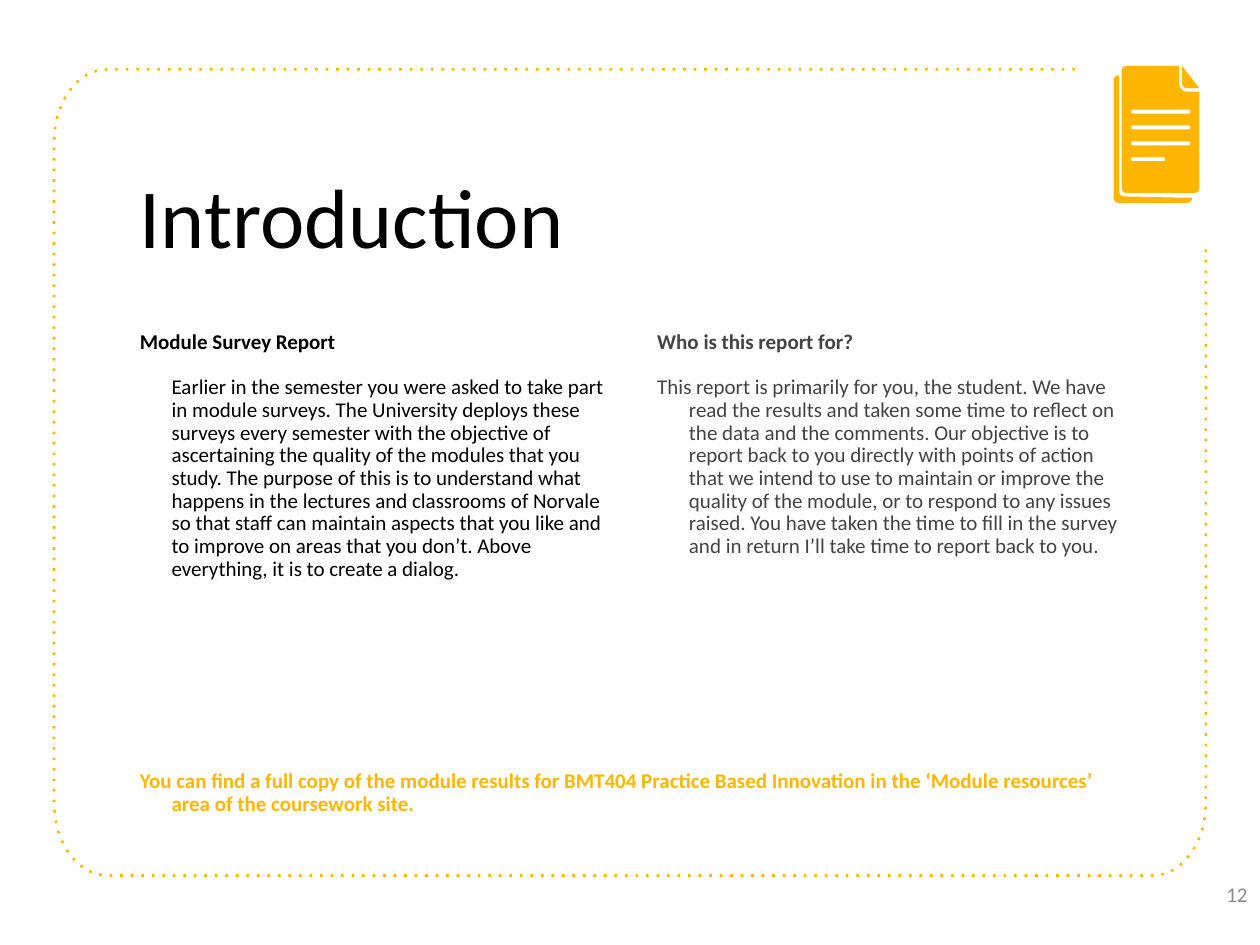
import math
from pptx import Presentation
from pptx import util as u
from pptx.dml.color import RGBColor
from pptx.enum import text
from pptx.oxml import ns, xmlchemy

COLORS = {"amber": "FFB600", "black": "000000", "dark": "434343", "gray": "8C8C8C"}
UNITS = 1000


def arc(cx, cy, rx, ry, start, end, steps=8):
    angles = [math.radians(start + (end - start) * i / steps) for i in range(steps + 1)]
    return [(cx + rx * math.cos(a), cy + ry * math.sin(a)) for a in angles]


def outline(contours, close):
    contours = [[(round(x * UNITS), round(y * UNITS)) for x, y in c] for c in contours]
    fb = s.shapes.build_freeform(*contours[0][0], scale=u.Cm(1) / UNITS)
    for i, points in enumerate(contours):
        if i:
            fb.move_to(*points[0])
        fb.add_line_segments(points[1:], close=close)
    sp = fb.convert_to_shape()
    sp.shadow.inherit = False
    return sp


prs = Presentation()
prs.slide_width, prs.slide_height = u.Cm(25.4), u.Cm(19.05)
s = prs.slides.add_slide(prs.slide_layouts[6])

left, top, right, bottom = 1.09, 1.4, 24.31, 17.65
rx, ry = 1.07, 1.45
frame = outline([
    [(21.67, top)]
    + arc(left + rx, top + ry, rx, ry, 270, 180)
    + arc(left + rx, bottom - ry, rx, ry, 180, 90)
    + arc(right - rx, bottom - ry, rx, ry, 90, 0)
    + [(right, 4.95)]
], False)
frame.fill.background()
frame.line.color.rgb = RGBColor.from_string(COLORS["amber"])
frame.line.width = u.Pt(1.5)
dash = xmlchemy.OxmlElement("a:prstDash")
dash.set("val", "dot")
frame._element.spPr.find(ns.qn("a:ln")).append(dash)

r = 0.1
back_page = (
    arc(22.55, 1.62, r, r, 270, 180)
    + arc(22.55, 3.99, r, r, 180, 90)
    + arc(23.93, 3.99, r, r, 90, 0)
    + arc(22.66, 3.86, r, r, 90, 180)
    + [(22.56, 1.52)]
)
front_page = (
    arc(22.71, 1.43, r, r, 270, 180)
    + arc(22.71, 3.79, r, r, 180, 90)
    + arc(24.08, 3.79, r, r, 90, 0)
    + [(24.18, 1.85)]
    + arc(23.94, 1.68, 0.17, 0.17, 90, 180)
    + [(23.77, 1.33)]
)
fold = [(23.83, 1.33)] + arc(23.93, 1.68, r, r, 180, 90) + [(24.18, 1.78)]
rules = []
for i, end in enumerate([24, 24, 24, 23.49]):
    y = 2.25 + 0.32 * i
    rules.append(arc(22.84, y, 0.04, 0.04, 270, 90) + arc(end - 0.04, y, 0.04, 0.04, 90, -90))
for contours in ([back_page], rules + [front_page], [fold]):
    sp = outline(contours, True)
    sp.fill.solid()
    sp.fill.fore_color.rgb = RGBColor.from_string(COLORS["amber"])
    sp.line.fill.background()

student_text = (
    "This report is primarily for you, the student. We have read the results and taken some "
    "time to reflect on the data and the comments. Our objective is to report back to you "
    "directly with points of action that we intend to use to maintain or improve the quality "
    "of the module, or to respond to any issues raised. You have taken the time to fill in "
    "the survey and in return I’ll take time to report back to you."
)
survey_text = (
    "Earlier in the semester you were asked to take part in module surveys. The University "
    "deploys these surveys every semester with the objective of ascertaining the quality of "
    "the modules that you study. The purpose of this is to understand what happens in the "
    "lectures and classrooms of Norvale so that staff can maintain aspects that you like and "
    "to improve on areas that you don’t. Above everything, it is to create a dialog."
)
results_text = (
    "You can find a full copy of the module results for BMT404 Practice Based Innovation in "
    "the ‘Module resources’ area of the coursework site."
)
indent = u.Cm(0.64)
boxes = [
    ((2.57, 3.3, 19.08, 3.18), 48, "black", [("Introduction", False, 0, 0)]),
    ((13, 6.43, 9.86, 7.98), 12, "dark",
     [("Who is this report for?", True, indent, -indent),
      (student_text, False, indent, -indent)]),
    ((2.57, 6.43, 9.86, 7.98), 12, "black",
     [("Module Survey Report", True, indent, -indent),
      (survey_text, False, indent, 0)]),
    ((2.57, 15.29, 20.27, 2.87), 12, "amber", [(results_text, True, indent, -indent)]),
    ((23.9, 16.99, 1.5, 2.06), 12, "gray", [("12", False, 0, 0)]),
]
for box, size, color, paragraphs in boxes:
    sp = s.shapes.add_textbox(*[u.Cm(v) for v in box])
    tf = sp.text_frame
    tf.word_wrap = True
    tf.margin_left = tf.margin_right = tf.margin_top = tf.margin_bottom = u.Cm(0.25)
    for i, (words, bold, margin, first) in enumerate(paragraphs):
        p = tf.add_paragraph() if i else tf.paragraphs[0]
        p.line_spacing = 0.9
        p.space_before = u.Pt(12.9 if i else 0)
        pPr = p._p.get_or_add_pPr()
        pPr.set("marL", str(margin))
        pPr.set("indent", str(first))
        r = p.add_run()
        r.text = words
        r.font.name = "Calibri"
        r.font.size = u.Pt(size)
        r.font.bold = bold
        r.font.color.rgb = RGBColor.from_string(COLORS[color])

tf.vertical_anchor = text.MSO_ANCHOR.MIDDLE
p.alignment = text.PP_ALIGN.RIGHT
p.line_spacing = 1.0

prs.save("out.pptx")
